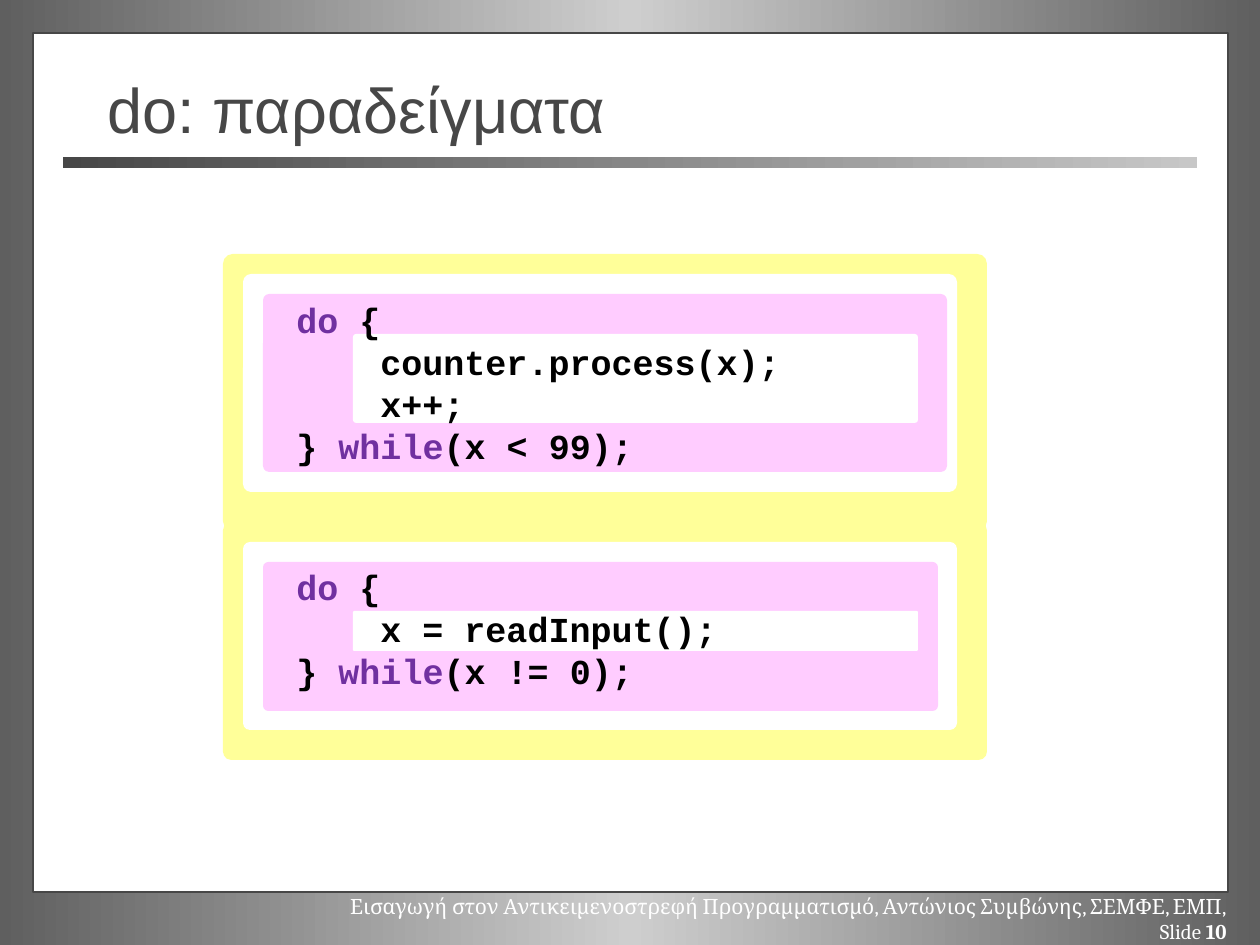
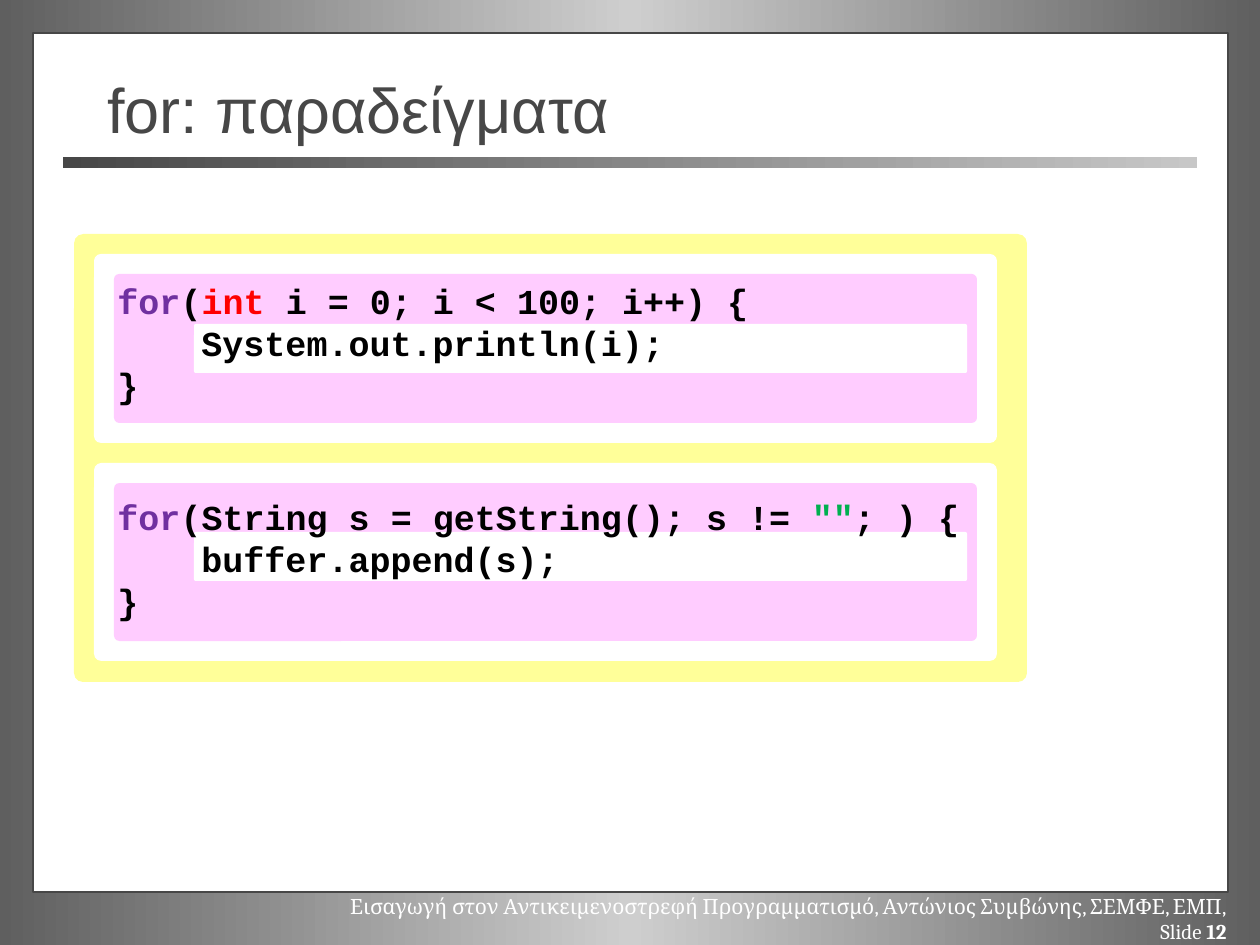
from copy import deepcopy

from pptx import Presentation
from pptx.dml.color import RGBColor
from pptx.enum.shapes import MSO_SHAPE
from pptx.enum.text import MSO_ANCHOR, PP_ALIGN
from pptx.oxml.ns import qn
from pptx.util import Emu, Pt

SCALE = 914400 / 126  # EMU in one px
CODE_INDENT = 84  # four characters of the code font

WHITE = RGBColor(0xFF, 0xFF, 0xFF)
BLACK = RGBColor(0x00, 0x00, 0x00)
DARK_GREY = RGBColor(0x47, 0x47, 0x47)
LIGHT_GREY = RGBColor(0xC7, 0xC7, 0xC7)
EDGE_GREY = RGBColor(0x5F, 0x5F, 0x5F)
CENTRE_GREY = RGBColor(0xCE, 0xCE, 0xCE)
YELLOW = RGBColor(0xFF, 0xFF, 0x99)
PINK = RGBColor(0xFF, 0xCC, 0xFF)
PURPLE = RGBColor(0x70, 0x30, 0xA0)
RED = RGBColor(0xFF, 0x00, 0x00)
GREEN = RGBColor(0x00, 0xB0, 0x50)

TITLE_FONT = {"name": "Arial", "size": Pt(36)}
FOOTER_FONT = {"name": "Cambria", "size": Pt(12)}
CODE_FONT = {"name": "Courier New", "size": Pt(20), "bold": True}
FOOTER = ("Εισαγωγή στον Αντικειμενοστρεφή Προγραμματισμό, "
          "Αντώνιος Συμβώνης, ΣΕΜΦΕ, ΕΜΠ, Slide ")

# Layers of a code card, from back to front: fill and corner rounding
CARD_LAYERS = [(YELLOW, 0.035), (WHITE, 0.037), (PINK, 0.035), (WHITE, 0.037)]

# Each example has four layer boxes, a text box and lines of (indent, runs)
SLIDES = [
    {
        "title": "do: παραδείγματα",
        "number": "10",
        "examples": [
            {
                "layers": [(223, 522, 764, 238), (243, 542, 714, 188),
                           (263, 562, 675, 149), (353, 611, 565, 40)],
                "text_box": (284, 559, 608, 140),
                "code": [
                    (0, [("do", PURPLE), (" {", BLACK)]),
                    (1, [("x = readInput();", BLACK)]),
                    (0, [("} ", BLACK), ("while", PURPLE), ("(x != 0);", BLACK)]),
                ],
            },
            {
                "layers": [(223, 254, 764, 277), (243, 274, 714, 218),
                           (263, 294, 684, 178), (353, 334, 565, 89)],
                "text_box": (284, 292, 608, 182),
                "code": [
                    (0, [("do", PURPLE), (" {", BLACK)]),
                    (1, [("counter.process(x);", BLACK)]),
                    (1, [("x++;", BLACK)]),
                    (0, [("} ", BLACK), ("while", PURPLE), ("(x < 99);", BLACK)]),
                ],
            },
        ],
    },
    {
        "title": "for: παραδείγματα",
        "number": "12",
        "examples": [
            {
                "layers": [(74, 234, 953, 269), (94, 254, 903, 189),
                           (114, 274, 863, 149), (194, 324, 773, 49)],
                "text_box": (105, 273, 1029, 140),
                "code": [
                    (0, [("for", PURPLE), ("(", BLACK), ("int ", RED),
                         ("i = 0; i < 100; i++) {", BLACK)]),
                    (1, [("System.out.println(i);", BLACK)]),
                    (0, [("}", BLACK)]),
                ],
            },
            {
                "layers": [(74, 423, 953, 259), (94, 463, 903, 198),
                           (114, 483, 863, 158), (194, 532, 773, 49)],
                "text_box": (105, 489, 900, 140),
                "code": [
                    (0, [("for", PURPLE), ("(String s = getString(); s != ", BLACK),
                         ('""', GREEN), ("; ) {", BLACK)]),
                    (1, [("buffer.append(s);", BLACK)]),
                    (0, [("}", BLACK)]),
                ],
            },
        ],
    },
]


def add_box(slide, kind, box, fill=None):
    """Add a preset shape without line or shadow."""
    shape = slide.shapes.add_shape(kind, *[Emu(round(px * SCALE)) for px in box])
    shape.shadow.inherit = False
    shape.line.fill.background()
    if fill is not None:
        shape.fill.solid()
        shape.fill.fore_color.rgb = fill
    return shape


def add_text(slide, box, lines, font):
    """Add a text box with one paragraph for each (indent, runs) line."""
    shape = slide.shapes.add_textbox(*[Emu(round(px * SCALE)) for px in box])
    frame = shape.text_frame
    frame.word_wrap = True
    for index, (indent, runs) in enumerate(lines):
        paragraph = frame.add_paragraph() if index else frame.paragraphs[0]
        if indent:
            margin = round(indent * CODE_INDENT * SCALE)
            paragraph._p.get_or_add_pPr().set("marL", str(margin))
        for text, color in runs:
            run = paragraph.add_run()
            run.text = text
            run.font.color.rgb = color
            for name, value in font.items():
                setattr(run.font, name, value)
    return frame


presentation = Presentation()
presentation.slide_width = Emu(round(1260 * SCALE))
presentation.slide_height = Emu(round(945 * SCALE))

for content in SLIDES:
    slide = presentation.slides.add_slide(presentation.slide_layouts[6])

    # Background: dark edges, light centre
    background = slide.background.fill
    background.gradient()
    background.gradient_angle = 0
    edge, centre = background.gradient_stops
    edge.color.rgb, edge.position = EDGE_GREY, 0
    centre.color.rgb, centre.position = CENTRE_GREY, 0.5
    stop_list = slide.background._cSld.find(".//" + qn("a:gsLst"))
    stop_list.append(deepcopy(stop_list[0]))
    background.gradient_stops[2].position = 1

    # White page
    page = add_box(slide, MSO_SHAPE.RECTANGLE, (33, 33, 1195, 859), WHITE)
    page.line.color.rgb = DARK_GREY
    page.line.width = Pt(1)

    # Footer with bold slide number
    footer = add_text(slide, (320, 887, 919, 38),
                      [(0, [(FOOTER, WHITE), (content["number"], WHITE)])],
                      FOOTER_FONT)
    footer.paragraphs[0].alignment = PP_ALIGN.RIGHT
    footer.paragraphs[0].runs[1].font.bold = True

    # Title and the band under it
    band = add_box(slide, MSO_SHAPE.RECTANGLE, (63, 157, 1134, 11))
    band.fill.gradient()
    band.fill.gradient_angle = 0
    for stop, color, position in zip(band.fill.gradient_stops,
                                     (DARK_GREY, LIGHT_GREY), (0, 1)):
        stop.color.rgb = color
        stop.position = position
    title = add_text(slide, (95, 69, 1071, 78),
                     [(0, [(content["title"], DARK_GREY)])], TITLE_FONT)
    title.vertical_anchor = MSO_ANCHOR.MIDDLE

    # Code cards, layer by layer, as the yellow ones overlap
    layers = zip(*[example["layers"] for example in content["examples"]])
    for (fill, rounding), boxes in zip(CARD_LAYERS, layers):
        for box in boxes:
            card = add_box(slide, MSO_SHAPE.ROUNDED_RECTANGLE, box, fill)
            card.adjustments[0] = rounding

    # Code on the cards
    for example in content["examples"]:
        add_text(slide, example["text_box"], example["code"], CODE_FONT)

presentation.save("out.pptx")
